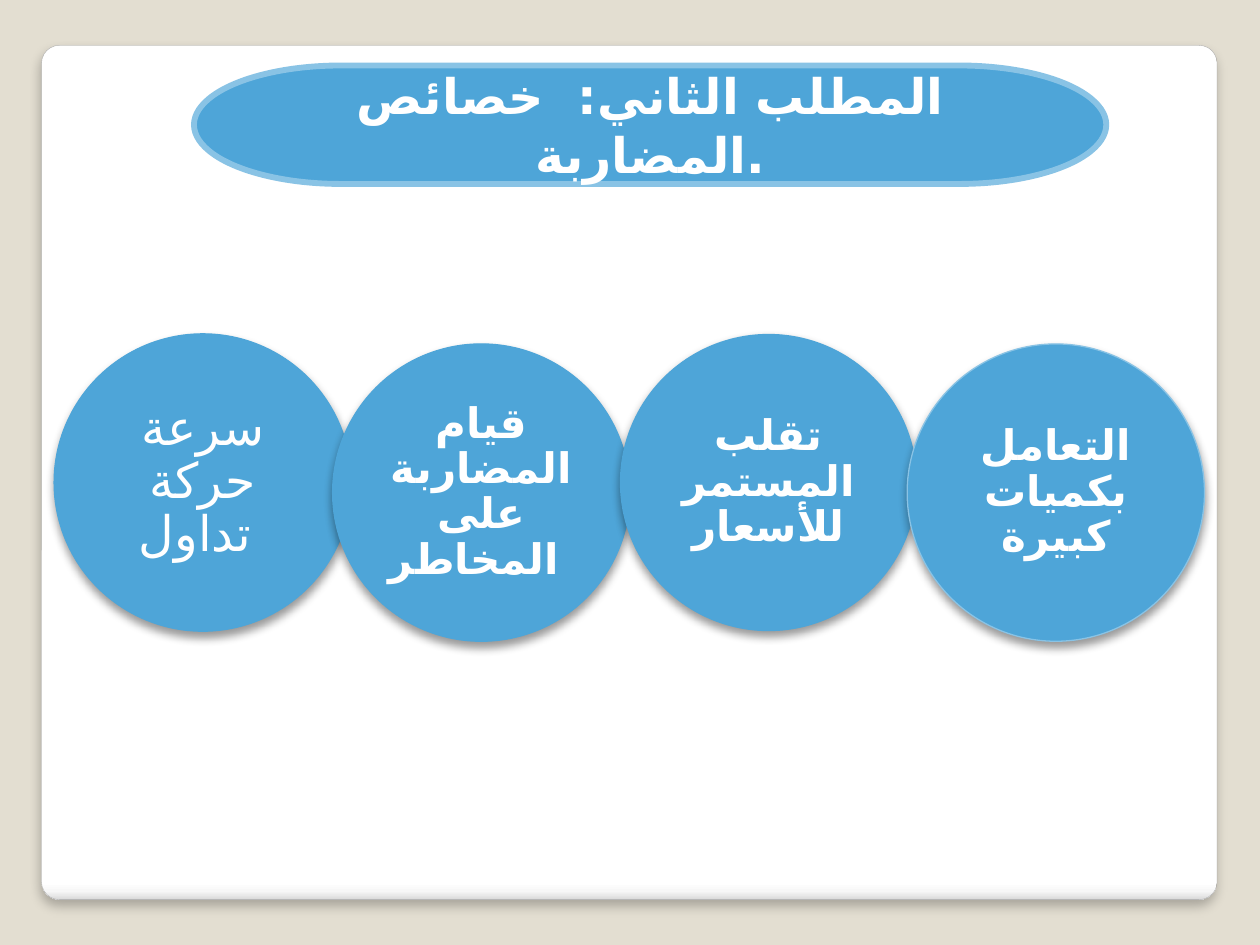
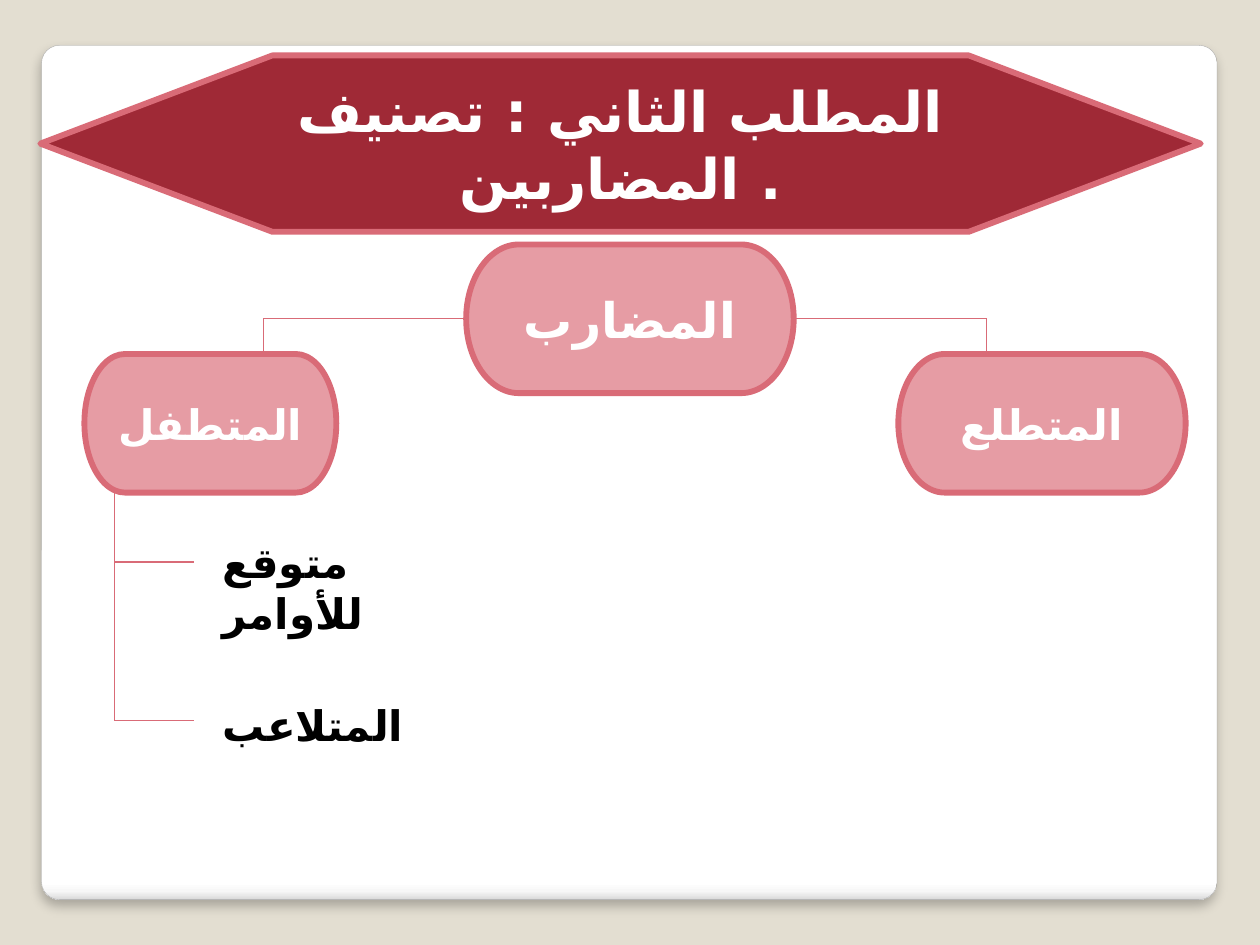
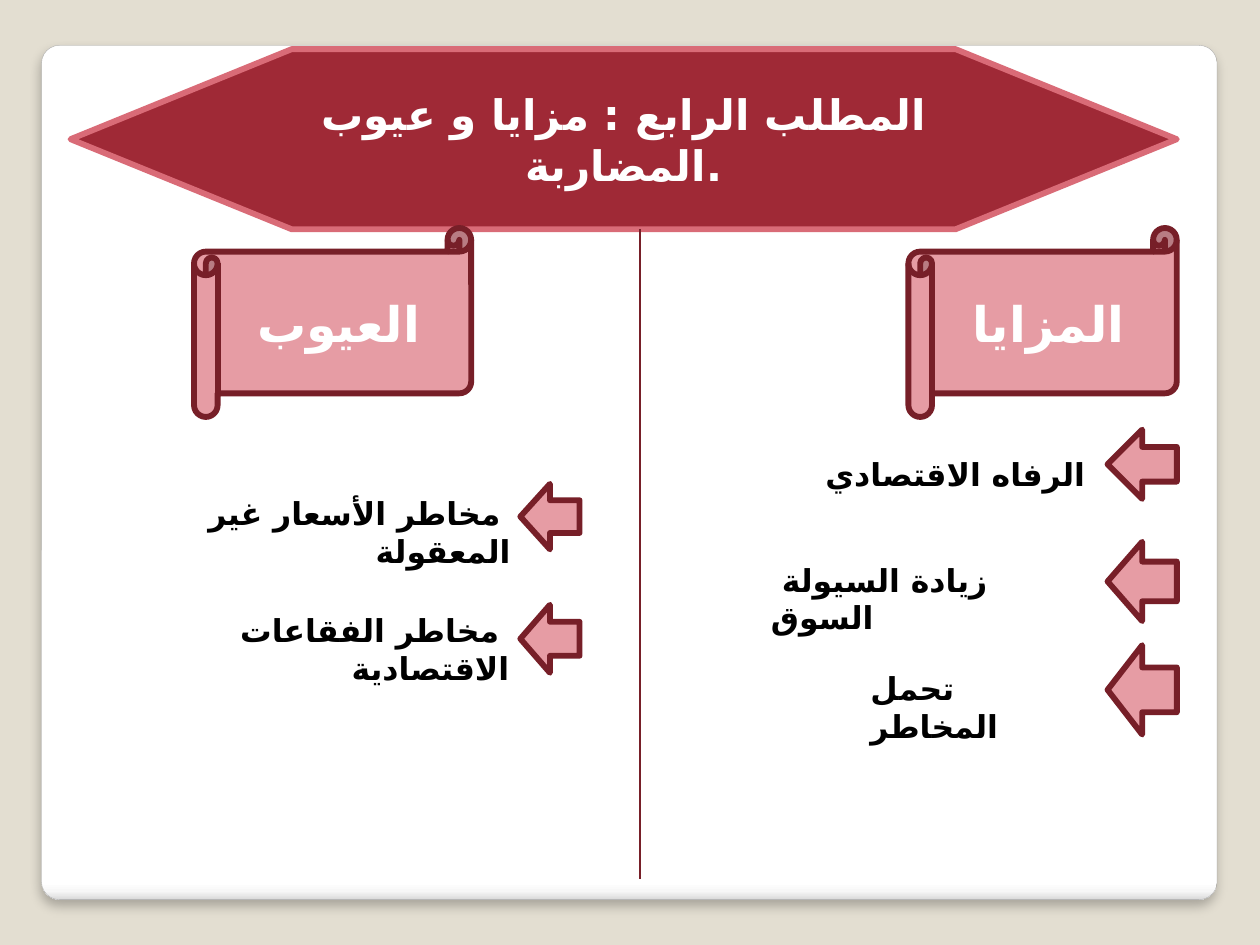
from dataclasses import dataclass

from pptx import Presentation
from pptx.dml.color import RGBColor
from pptx.enum.shapes import MSO_CONNECTOR, MSO_SHAPE as Preset
from pptx.enum.text import MSO_AUTO_SIZE, PP_ALIGN as Align
from pptx.oxml import parse_xml
from pptx.oxml.ns import nsdecls, qn
from pptx.util import Inches, Pt


@dataclass(frozen=True)
class Theme:
    font: str = "DejaVu Sans"
    backdrop: str = "E3DED1"
    panel_edge: str = "A4A4A4"
    white: str = "FFFFFF"
    black: str = "000000"
    blue: str = "4EA5D8"
    light_blue: str = "89C3E5"
    red: str = "9F2936"
    dark_red: str = "771F28"
    rose: str = "D96B77"
    pink: str = "E69CA4"
    huge: int = 32
    large: int = 28
    medium: int = 24
    small: int = 18
    border: float = 3.35
    thin: float = 0.75


THEME = Theme()
rgb = RGBColor.from_string


def add_block(slide, preset, box, fill, edge=None, width=THEME.border, shadow=None):
    """Add a filled shape; shadow is (opacity in percent, blur, distance) with points."""
    block = slide.shapes.add_shape(preset, *map(Inches, box))
    block.fill.solid()
    block.fill.fore_color.rgb = rgb(fill)
    if edge:
        block.line.color.rgb = rgb(edge)
        block.line.width = Pt(width)
    else:
        block.line.fill.background()
    block.shadow.inherit = False
    if shadow:
        opacity, blur, distance = shadow
        block.element.spPr.find(qn("a:effectLst")).append(parse_xml(
            f'<a:outerShdw {nsdecls("a")} blurRad="{Pt(blur)}" dist="{Pt(distance)}" '
            f'dir="5400000" algn="t" rotWithShape="0"><a:srgbClr val="000000">'
            f'<a:alpha val="{opacity * 1000}"/></a:srgbClr></a:outerShdw>'))
    return block


def write(shape, text, size, color=THEME.white, bold=True, align=Align.CENTER, rtl=False):
    """Write one paragraph; a right-to-left one opens with a plain space."""
    shape.text_frame.word_wrap = True
    paragraph = shape.text_frame.paragraphs[0]
    paragraph.alignment = align
    if rtl:
        paragraph.element.get_or_add_pPr().set("rtl", "1") if hasattr(paragraph, "element") \
            else paragraph._p.get_or_add_pPr().set("rtl", "1")
    for words, weight in ([(" ", False)] if rtl else []) + [(text, bold)]:
        run = paragraph.add_run()
        run.text = words
        run.font.size = Pt(size)
        run.font.bold = weight
        run.font.color.rgb = rgb(color)
        run.font.name = THEME.font
        run.font._element.append(
            parse_xml(f'<a:cs {nsdecls("a")} typeface="{THEME.font}"/>'))


prs = Presentation()
prs.slide_width, prs.slide_height = Inches(10), Inches(7.5)
features, speculators, balance = [
    prs.slides.add_slide(prs.slide_layouts[6]) for _ in range(3)]

# Shared backdrop and white panel, kept on the slide master
master = prs.slide_master
master.background.fill.solid()
master.background.fill.fore_color.rgb = rgb(THEME.backdrop)
panel = add_block(features, Preset.ROUNDED_RECTANGLE, (0.33, 0.36, 9.33, 6.78),
                  THEME.white, THEME.panel_edge, 0.16, (25, 6, 4))
panel.adjustments[0] = 0.021
panel.fill.gradient()
panel.fill.gradient_angle = 270
stops = panel.element.spPr.find(qn("a:gradFill")).find(qn("a:gsLst"))
for stop in list(stops):
    stops.remove(stop)
for percent, shade in ((0, "FFFFFF"), (98, "FFFFFF"), (99, "F7F7F7"), (100, "DADADA")):
    stops.append(parse_xml(f'<a:gs {nsdecls("a")} pos="{percent * 1000}">'
                           f'<a:srgbClr val="{shade}"/></a:gs>'))
panel.element.nvSpPr.cNvPr.set("id", "20")
master.shapes.element.insert(2, panel.element)

# Title bands
titles = (
    (features, Preset.FLOWCHART_TERMINATOR, (1.54, 0.52, 7.24, 0.94), THEME.blue,
     THEME.light_blue, "المطلب الثاني:  خصائص المضاربة.", THEME.large),
    (speculators, Preset.FLOWCHART_PREPARATION, (0.32, 0.44, 9.21, 1.4), THEME.red,
     THEME.rose, "المطلب الثاني : تصنيف المضاربين .", THEME.huge),
    (balance, Preset.FLOWCHART_PREPARATION, (0.56, 0.39, 8.78, 1.43), THEME.red,
     THEME.rose, "المطلب الرابع : مزايا و عيوب المضاربة.", THEME.medium),
)
for slide, preset, box, fill, edge, text, size in titles:
    write(add_block(slide, preset, box, fill, edge), text, size)

# Slide 1: four overlapping circles, alternately raised and lowered
circles = (
    (0.43, "سرعة حركة تداول ", THEME.large, False, THEME.blue),
    (2.64, "قيام المضاربة على المخاطر ", THEME.medium, True, THEME.blue),
    (4.92, "تقلب المستمر للأسعار", THEME.medium, True, None),
    (7.2, "التعامل بكميات كبيرة", THEME.medium, True, THEME.light_blue),
)
for index, (left, text, size, bold, edge) in enumerate(circles):
    circle = add_block(features, Preset.OVAL, (left, 2.65 + 0.08 * (index % 2), 2.36, 2.36),
                       THEME.blue, edge, THEME.thin, (40, 5.2, 3))
    frame = circle.text_frame
    frame.margin_left = frame.margin_right = frame.margin_top = frame.margin_bottom = 0
    write(circle, text, size, bold=bold)
    frame.paragraphs[0].line_spacing = 0.9

# Slide 2: tree of speculators
nodes = (
    ("المضارب", (3.7, 1.94, 2.6, 1.18), THEME.large),
    ("المتطفل", (0.67, 2.81, 2, 1.1), THEME.medium),
    ("المتطلع", (7.13, 2.81, 2.28, 1.1), THEME.medium),
)
tree = []
for text, box, size in nodes:
    node = add_block(speculators, Preset.FLOWCHART_TERMINATOR, box, THEME.pink, THEME.rose)
    write(node, text, size)
    tree.append(node)
root = tree[0]

# Slide 3: scroll headings and arrow bullets
for text, left, width in (("المزايا", 7.21, 2.13), ("العيوب", 1.54, 2.2)):
    scroll = add_block(balance, Preset.HORIZONTAL_SCROLL, (left, 1.81, width, 1.5),
                       THEME.pink, THEME.dark_red)
    write(scroll, text, THEME.large)
arrow_columns = (
    (8.79, 0.55, ((3.41, 0.55), (4.3, 0.63), (5.12, 0.71))),
    (4.13, 0.47, ((3.84, 0.52), (4.8, 0.54))),
)
for left, width, arrows in arrow_columns:
    for top, height in arrows:
        add_block(balance, Preset.LEFT_ARROW, (left, top, width, height),
                  THEME.pink, THEME.dark_red)

# Black labels of slides 2 and 3
labels = (
    (speculators, "متوقع للأوامر", (1.67, 4.21, 2.24, 0.5), THEME.medium, Align.LEFT, False),
    (speculators, "المتلاعب", (1.67, 5.5, 1.69, 0.5), THEME.medium, Align.LEFT, False),
    (balance, "الرفاه الاقتصادي", (6.34, 3.56, 2.45, 0.4), THEME.small, Align.RIGHT, True),
    (balance, "زيادة السيولة  السوق", (6.02, 4.4, 2.77, 0.4), THEME.small, Align.LEFT, False),
    (balance, "تحمل المخاطر", (6.81, 5.26, 1.98, 0.4), THEME.small, Align.LEFT, True),
    (balance, "مخاطر الأسعار غير المعقولة", (0.59, 3.87, 3.56, 0.4), THEME.small,
     Align.RIGHT, True),
    (balance, "مخاطر الفقاعات الاقتصادية ", (0.56, 4.8, 3.58, 0.4), THEME.small,
     Align.RIGHT, True),
)
for slide, text, box, size, align, rtl in labels:
    label = slide.shapes.add_textbox(*map(Inches, box))
    write(label, text, size, THEME.black, align=align, rtl=rtl)
    label.text_frame.auto_size = MSO_AUTO_SIZE.SHAPE_TO_FIT_TEXT

# Branches of the tree and the divider; a side number joins the line to the root
lines = (
    (speculators, THEME.rose, (3.7, 2.53, 2.09, 2.53), 1),
    (speculators, THEME.rose, (6.3, 2.53, 7.83, 2.53), 3),
    (speculators, THEME.rose, (7.83, 2.53, 7.83, 2.81), None),
    (speculators, THEME.rose, (2.09, 2.53, 2.09, 2.81), None),
    (speculators, THEME.rose, (0.91, 3.91, 0.91, 5.72), None),
    (speculators, THEME.rose, (0.91, 4.46, 1.54, 4.46), None),
    (speculators, THEME.rose, (0.91, 5.72, 1.54, 5.72), None),
    (balance, THEME.dark_red, (5.08, 1.82, 5.08, 6.98), None),
)
for slide, color, ends, root_side in lines:
    branch = slide.shapes.add_connector(MSO_CONNECTOR.STRAIGHT, *map(Inches, ends))
    branch.line.color.rgb = rgb(color)
    branch.line.width = Pt(THEME.thin)
    branch.element.spPr.append(parse_xml(f'<a:effectLst {nsdecls("a")}/>'))
    if root_side is not None:
        branch.begin_connect(root, root_side)

prs.save("out.pptx")
